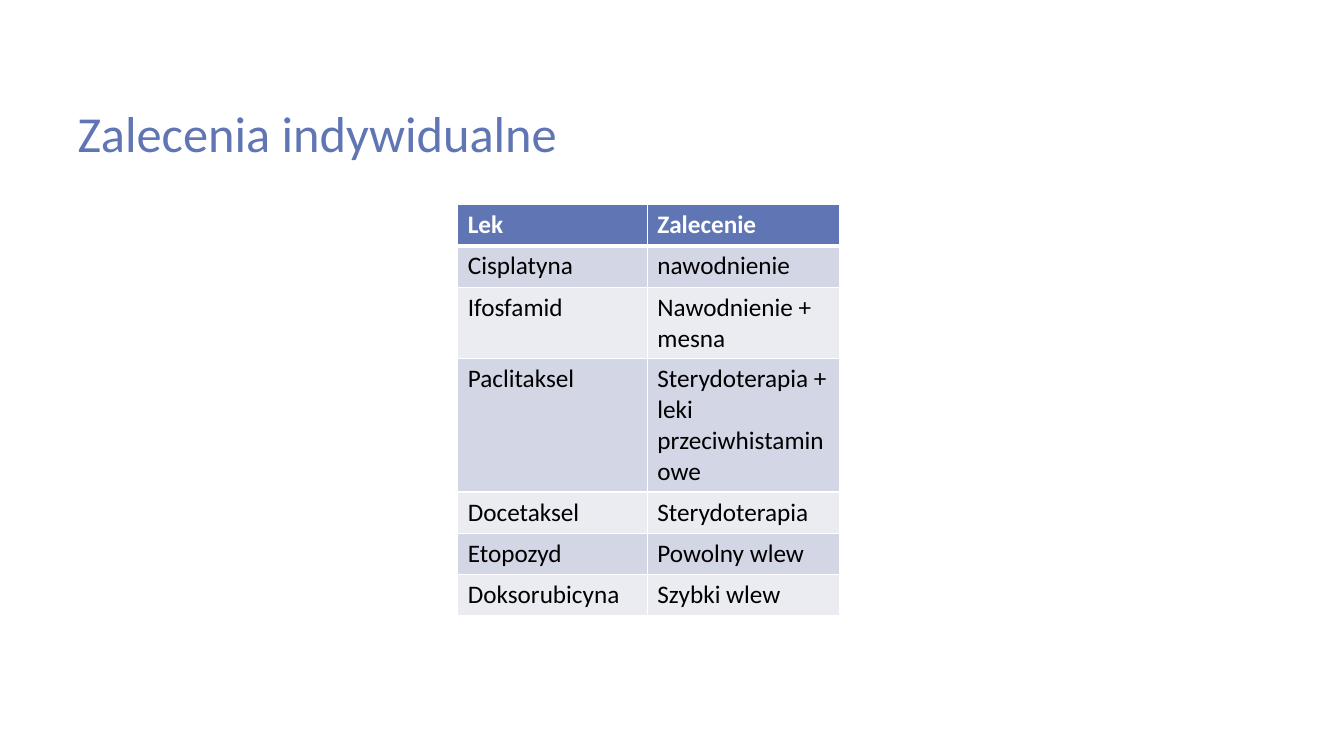
import pptx
import pptx.dml.color
import pptx.enum.text
import pptx.oxml
import pptx.oxml.ns
import pptx.util

Inches = pptx.util.Inches
ACCENT, WHITE, BLACK = "6076B4", "FFFFFF", "000000"
BANDS = ("D2D6E5", "EAECF2")
RECOMMENDATIONS = [
    ("Lek", "Zalecenie"),
    ("Cisplatyna", "nawodnienie"),
    ("Ifosfamid", "Nawodnienie + mesna"),
    ("Paclitaksel", "Sterydoterapia + leki przeciwhistaminowe"),
    ("Docetaksel", "Sterydoterapia"),
    ("Etopozyd", "Powolny wlew"),
    ("Doksorubicyna", "Szybki wlew"),
]


def color(value):
    return pptx.dml.color.RGBColor.from_string(value)


class SlideBuilder:
    font_name = "Calibri"

    def __init__(self, presentation):
        self.slide = presentation.slides.add_slide(presentation.slide_layouts[5])

    def add_text(self, text_frame, text, size, text_color, bold=False):
        paragraph = text_frame.paragraphs[0]
        run = paragraph.add_run()
        run.text = text
        style = {"name": self.font_name, "size": pptx.util.Pt(size), "bold": bold}
        for name, value in style.items():
            setattr(run.font, name, value)
        run.font.color.rgb = color(text_color)
        return paragraph

    def title(self, text, left, top, width, height):
        shape = self.slide.shapes.title
        position = {"left": left, "top": top, "width": width, "height": height}
        for name, value in position.items():
            setattr(shape, name, Inches(value))
        shape.text_frame.word_wrap = True
        shape.text_frame.vertical_anchor = pptx.enum.text.MSO_ANCHOR.BOTTOM
        paragraph = self.add_text(shape.text_frame, text, 36, ACCENT)
        paragraph.alignment = pptx.enum.text.PP_ALIGN.LEFT

    def border(self, cell, side, width):
        cell._tc.get_or_add_tcPr().append(pptx.oxml.parse_xml(
            f'<a:{side} {pptx.oxml.ns.nsdecls("a")} w="{pptx.util.Pt(width)}">'
            f'<a:solidFill><a:srgbClr val="{WHITE}"/></a:solidFill></a:{side}>'))

    def table(self, rows, left, top, column_widths, row_height):
        table = self.slide.shapes.add_table(
            len(rows), len(column_widths), Inches(left), Inches(top),
            Inches(sum(column_widths)), Inches(row_height * len(rows))).table
        for column, width in zip(table.columns, column_widths):
            column.width = Inches(width)
        for row_index, row in enumerate(rows):
            is_header = row_index == 0
            fill = ACCENT if is_header else BANDS[(row_index - 1) % 2]
            widths = {"lnL": 1, "lnR": 1, "lnT": 3 if row_index == 1 else 1,
                      "lnB": 3 if is_header else 1}
            for column_index, text in enumerate(row):
                cell = table.cell(row_index, column_index)
                for side, width in widths.items():
                    self.border(cell, side, width)
                cell.fill.solid()
                cell.fill.fore_color.rgb = color(fill)
                self.add_text(cell.text_frame, text, 18,
                              WHITE if is_header else BLACK, is_header)


def main():
    presentation = pptx.Presentation()
    presentation.slide_width = Inches(13.33)
    presentation.slide_height = Inches(7.5)
    builder = SlideBuilder(presentation)
    builder.title("Zalecenia indywidualne", 0.67, 0.41, 9.49, 1.25)
    builder.table(RECOMMENDATIONS, 4.54, 2.03, (1.88, 1.91), 0.41)
    presentation.save("out.pptx")


if __name__ == "__main__":
    main()
